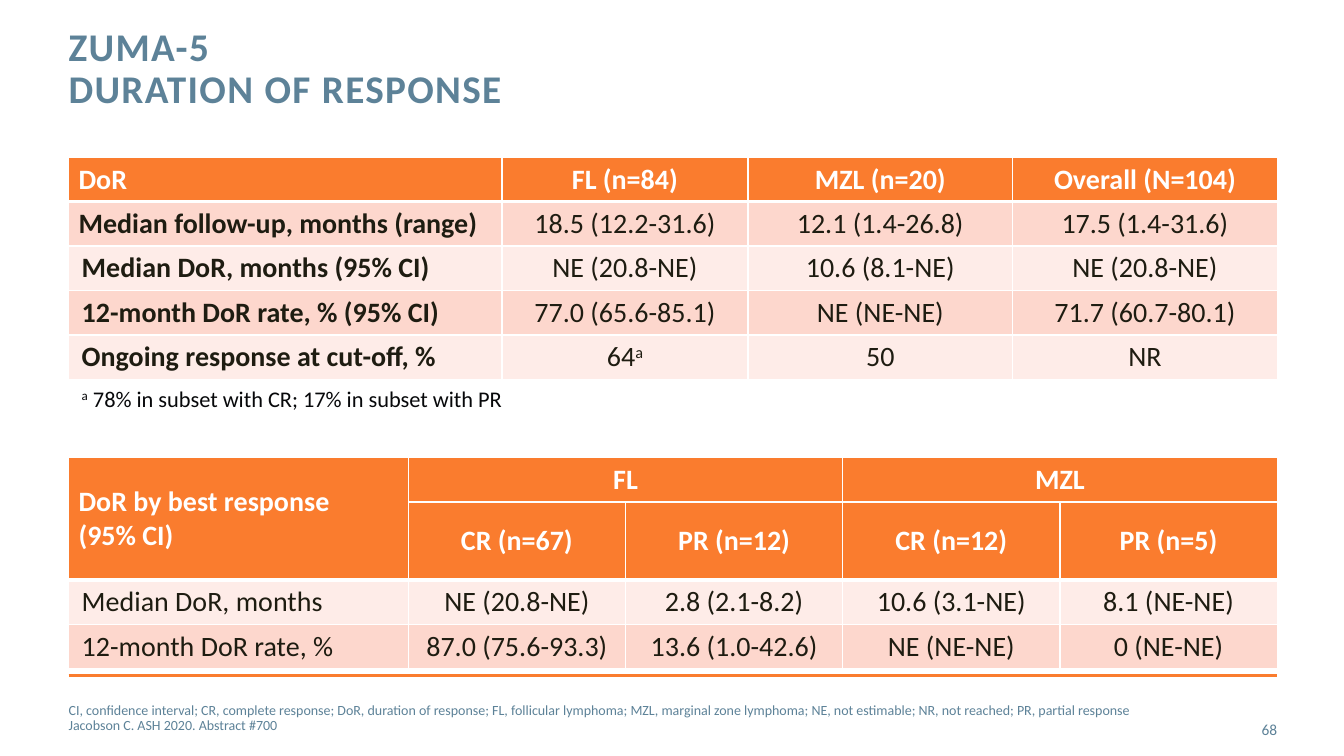
from lxml import etree
from pptx import Presentation
from pptx.dml.color import RGBColor
from pptx.enum.shapes import MSO_CONNECTOR
from pptx.enum.text import MSO_ANCHOR, PP_ALIGN
from pptx.oxml.ns import qn
from pptx.util import Cm, Pt

STRAIGHT = MSO_CONNECTOR.STRAIGHT
TOP, MIDDLE = MSO_ANCHOR.TOP, MSO_ANCHOR.MIDDLE
LEFT, CENTER, RIGHT = PP_ALIGN.LEFT, PP_ALIGN.CENTER, PP_ALIGN.RIGHT

ORANGE, DARK_BAND, LIGHT_BAND = "FA7C2E", "FDD7CD", "FEECE8"
WHITE, INK, NOTE_INK, SLATE = "FFFFFF", "1E1C11", "07080A", "5D8298"

MARGIN_LEFT, CONTENT_WIDTH = 1.73, 30.46
ROW_HEIGHT = 1.12
WIDE_INSET, NARROW_INSET = 0.33, 0.25

RESPONSE_ROWS = [
    ["DoR", "FL (n=84)", "MZL (n=20)", "Overall (N=104)"],
    ["Median follow-up, months (range)", "18.5 (12.2-31.6)", "12.1 (1.4-26.8)", "17.5 (1.4-31.6)"],
    ["Median DoR, months (95% CI)", "NE (20.8-NE)", "10.6 (8.1-NE)", "NE (20.8-NE)"],
    ["12-month DoR rate, % (95% CI)", "77.0 (65.6-85.1)", "NE (NE-NE)", "71.7 (60.7-80.1)"],
    ["Ongoing response at cut-off, %", "64^a", "50", "NR"],
]
RESPONSE_NOTE = "^a^ 78% in subset with CR; 17% in subset with PR"

BEST_RESPONSE_TITLE = "DoR by best response\n(95% CI)"
BEST_RESPONSE_GROUPS = ["FL", "MZL"]
BEST_RESPONSE_ROWS = [
    ["CR (n=67)", "PR (n=12)", "CR (n=12)", "PR (n=5)"],
    ["Median DoR, months", "NE (20.8-NE)", "2.8 (2.1-8.2)", "10.6 (3.1-NE)", "8.1 (NE-NE)"],
    ["12-month DoR rate, %", "87.0 (75.6-93.3)", "13.6 (1.0-42.6)", "NE (NE-NE)", "0 (NE-NE)"],
]

ABBREVIATIONS = (
    "CI, confidence interval; CR, complete response; DoR, duration of response; "
    "FL, follicular lymphoma; MZL, marginal zone lymphoma; NE, not estimable; "
    "NR, not reached; PR, partial response"
)
CITATION = "Jacobson C. ASH 2020. Abstract #700"


def color(hex_string):
    return RGBColor.from_string(hex_string)


def write(paragraph, text, size, ink, bold=False, tracking=0, **paragraph_format):
    """Write text; parts between carets are superscript, newlines are line breaks."""
    for name, value in paragraph_format.items():
        setattr(paragraph, name, value)
    for line_index, line in enumerate(text.split("\n")):
        if line_index:
            paragraph.add_line_break()
        for part_index, part in enumerate(line.split("^")):
            if not part:
                continue
            run = paragraph.add_run()
            run.text = part
            for name, value in {"name": "Calibri", "size": Pt(size), "bold": bold}.items():
                setattr(run.font, name, value)
            run.font.color.rgb = color(ink)
            properties = run._r.get_or_add_rPr()
            if part_index % 2:
                properties.set("baseline", "30000")
            if tracking:
                properties.set("spc", str(tracking * 100))


def add_text_frame(slide, left, top, width, height, anchor):
    frame = slide.shapes.add_textbox(Cm(left), Cm(top), Cm(width), Cm(height)).text_frame
    settings = {"word_wrap": True, "vertical_anchor": anchor, "margin_left": 0,
                "margin_top": 0, "margin_right": 0, "margin_bottom": 0}
    for name, value in settings.items():
        setattr(frame, name, value)
    return frame


def set_borders(cell, heavy_edge=None):
    properties = cell._tc.get_or_add_tcPr()
    for index, edge in enumerate(("lnL", "lnR", "lnT", "lnB")):
        line = etree.Element(qn(f"a:{edge}"), w=str(Pt(3 if edge == heavy_edge else 1)))
        fill = etree.SubElement(line, qn("a:solidFill"))
        etree.SubElement(fill, qn("a:srgbClr"), val=WHITE)
        properties.insert(index, line)


def fill_cell(cell, text, background, ink=INK, bold=False, align=CENTER, size=20,
              inset=WIDE_INSET, anchor=MIDDLE, heavy_edge=None):
    settings = {"margin_left": Cm(inset), "margin_right": Cm(inset), "margin_top": Cm(0.13),
                "margin_bottom": Cm(0.13), "vertical_anchor": anchor}
    for name, value in settings.items():
        setattr(cell, name, value)
    if background:
        cell.fill.solid()
        cell.fill.fore_color.rgb = color(background)
    else:
        cell.fill.background()
    set_borders(cell, heavy_edge)
    write(cell.text_frame.paragraphs[0], text, size, ink, bold, alignment=align)


def add_grid(slide, left, top, column_widths, row_heights):
    table = slide.shapes.add_table(
        len(row_heights), len(column_widths), Cm(left), Cm(top),
        Cm(sum(column_widths)), Cm(sum(row_heights))).table
    table.horz_banding = False
    table.first_row = False
    for column, width in zip(table.columns, column_widths):
        column.width = Cm(width)
    for row, height in zip(table.rows, row_heights):
        row.height = Cm(height)
    return table


def add_response_table(slide, left, top, width):
    label_width, first_width = 10.92, 6.2
    other_width = (width - label_width - first_width) / 2
    table = add_grid(slide, left, top, [label_width, first_width, other_width, other_width],
                     [ROW_HEIGHT] * len(RESPONSE_ROWS) + [1.04])
    for row_index, row in enumerate(RESPONSE_ROWS):
        header = row_index == 0
        background = ORANGE if header else (LIGHT_BAND, DARK_BAND)[row_index % 2]
        heavy_edge = {0: "lnB", 1: "lnT"}.get(row_index)
        for column_index, text in enumerate(row):
            is_label = column_index == 0
            narrow = header or (row_index == 1 and is_label)
            fill_cell(table.cell(row_index, column_index), text, background,
                      ink=WHITE if header else INK, bold=header or is_label,
                      align=LEFT if is_label else CENTER,
                      inset=NARROW_INSET if narrow else WIDE_INSET,
                      anchor=TOP if narrow else MIDDLE, heavy_edge=heavy_edge)
    # Footnote across the last row
    note_row = len(RESPONSE_ROWS)
    note = table.cell(note_row, 0)
    note.merge(table.cell(note_row, len(RESPONSE_ROWS[0]) - 1))
    fill_cell(note, RESPONSE_NOTE, None, ink=NOTE_INK, align=LEFT, size=16)


def add_best_response_table(slide, left, top, width):
    label_width = 8.56
    value_width = (width - label_width) / 4
    table = add_grid(slide, left, top, [label_width] + [value_width] * 4,
                     [ROW_HEIGHT, 1.96, ROW_HEIGHT, ROW_HEIGHT])
    header_format = {"background": ORANGE, "ink": WHITE, "bold": True}
    # Merged header cells
    title = table.cell(0, 0)
    title.merge(table.cell(1, 0))
    fill_cell(title, BEST_RESPONSE_TITLE, align=LEFT, inset=NARROW_INSET,
              heavy_edge="lnB", **header_format)
    for group_index, group in enumerate(BEST_RESPONSE_GROUPS):
        first_column = 1 + 2 * group_index
        cell = table.cell(0, first_column)
        cell.merge(table.cell(0, first_column + 1))
        fill_cell(cell, group, inset=NARROW_INSET, anchor=TOP, **header_format)
    # Subheaders and values
    subheaders, *value_rows = BEST_RESPONSE_ROWS
    for column_index, text in enumerate(subheaders, start=1):
        fill_cell(table.cell(1, column_index), text, heavy_edge="lnB", **header_format)
    for row_index, row in enumerate(value_rows, start=2):
        for column_index, text in enumerate(row):
            fill_cell(table.cell(row_index, column_index), text,
                      (LIGHT_BAND, DARK_BAND)[row_index % 2],
                      align=CENTER if column_index else LEFT,
                      heavy_edge="lnT" if row_index == 2 else None)


def add_title(slide, left, top, width, height):
    frame = add_text_frame(slide, left, top, width, height, TOP)
    write(frame.paragraphs[0], "ZUMA-5\nDURATION OF RESPONSE", 28, SLATE, bold=True,
          tracking=1, line_spacing=Pt(30))


def add_footer(slide, left, top, width):
    # Rule
    rule = slide.shapes.add_connector(STRAIGHT, Cm(left), Cm(top), Cm(left + width), Cm(top))
    rule.line.color.rgb = color(ORANGE)
    rule.line.width = Pt(2)
    etree.SubElement(rule._element.spPr, qn("a:effectLst"))
    # Abbreviations and citation
    notes = add_text_frame(slide, left, top + 0.56, 28.96, 1.02, MIDDLE)
    write(notes.paragraphs[0], ABBREVIATIONS, 10, SLATE)
    write(notes.add_paragraph(), CITATION, 10, SLATE, line_spacing=0.9)
    # Page number
    number_width = 2.18
    number = add_text_frame(slide, left + width - number_width, top + 0.84,
                            number_width, 1.02, MIDDLE)
    write(number.paragraphs[0], "68", 11, SLATE, alignment=RIGHT)


def main():
    presentation = Presentation()
    presentation.slide_width, presentation.slide_height = Cm(33.87), Cm(19.05)
    slide = presentation.slides.add_slide(presentation.slide_layouts[6])
    add_title(slide, MARGIN_LEFT, 0.69, 24.28, 2.24)
    add_response_table(slide, MARGIN_LEFT, 3.96, CONTENT_WIDTH)
    add_best_response_table(slide, MARGIN_LEFT, 11.53, CONTENT_WIDTH)
    add_footer(slide, MARGIN_LEFT, 17.02, CONTENT_WIDTH)
    presentation.save("out.pptx")


if __name__ == "__main__":
    main()
